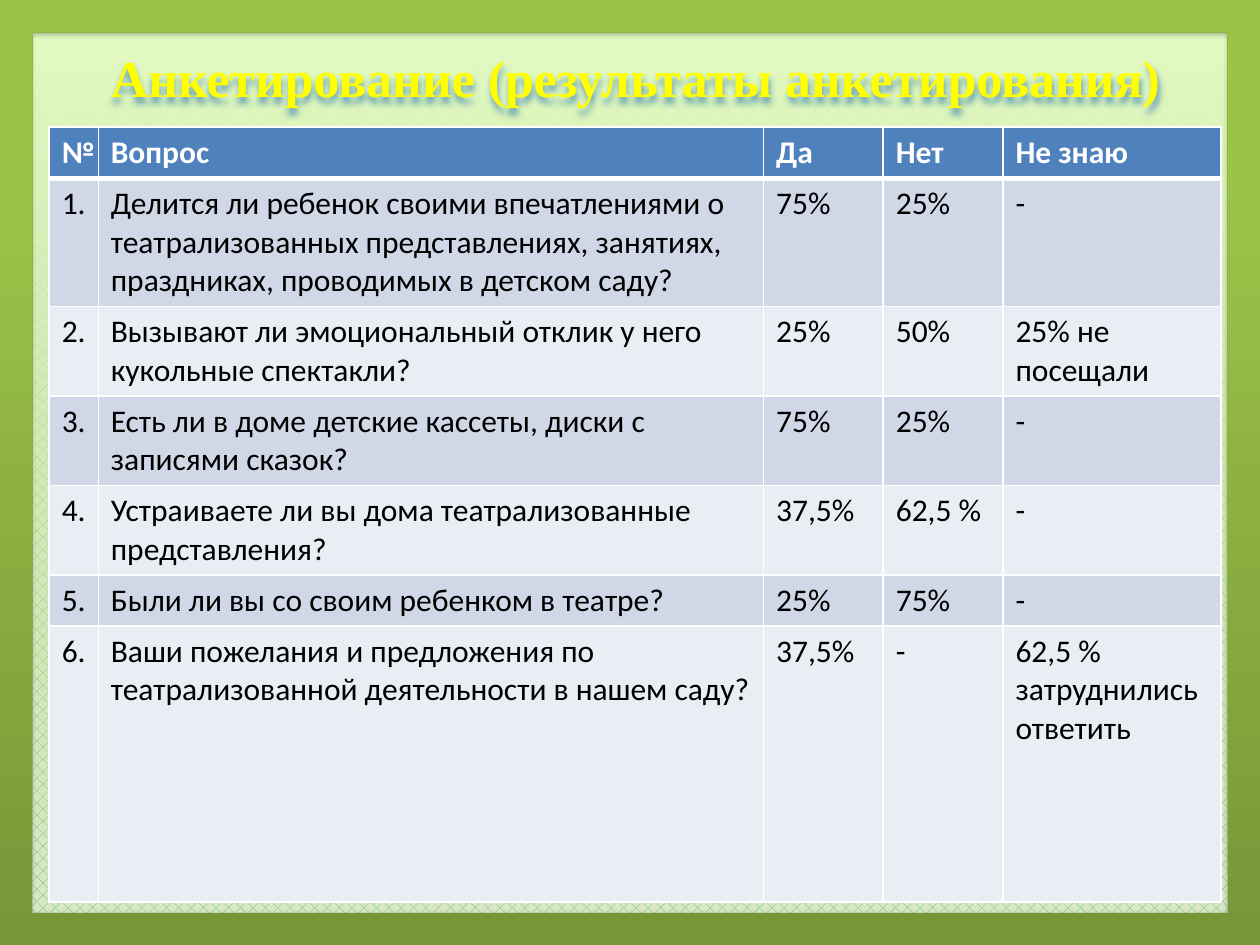
from dataclasses import dataclass

from lxml import etree
from pptx import Presentation
from pptx.dml.color import RGBColor
from pptx.enum.dml import MSO_PATTERN
from pptx.enum.shapes import MSO_SHAPE
from pptx.enum.text import MSO_ANCHOR, PP_ALIGN
from pptx.oxml.ns import qn
from pptx.util import Inches, Pt

RECTANGLE, FRAME = MSO_SHAPE.RECTANGLE, MSO_SHAPE.FRAME
LEFT, TOP = PP_ALIGN.LEFT, MSO_ANCHOR.TOP
DOTS = MSO_PATTERN.PERCENT_30
TITLE_ONLY = 5
GRID_COLUMNS, GRID_ROWS = 100, 75


@dataclass(frozen=True)
class Theme:
    title_font: str = "Times New Roman"
    body_font: str = "Calibri"
    title_size: float = 29.6
    body_size: float = 18
    title: str = "FFFF00"
    title_shadow: str = "1F6FA8"
    white: str = "FFFFFF"
    black: str = "000000"
    pattern: str = "00B050"
    panel_line: str = "98B955"
    panel: tuple = ((0, "DAFDA7", 37), (1, "E4FCC2", 100))
    frame: tuple = ((0, "779737", 100), (0.8, "9BC348", 100))
    header: str = "4F81BD"
    bands: tuple = ("D0D8E8", "E9EDF4")


def rgb(value):
    return RGBColor.from_string(value)


def add_color(parent, value, alpha=100):
    color = etree.SubElement(parent, qn("a:srgbClr"), val=value)
    if alpha < 100:
        etree.SubElement(color, qn("a:alpha"), val=str(alpha * 1000))


class SlideBuilder:
    """Places styled elements on a slide, measured in grid columns and rows."""

    def __init__(self, presentation, theme):
        self.theme = theme
        self.column = presentation.slide_width / GRID_COLUMNS
        self.row = presentation.slide_height / GRID_ROWS
        self.slide = presentation.slides.add_slide(presentation.slide_layouts[TITLE_ONLY])

    def box(self, left, top, width, height):
        return (round(left * self.column), round(top * self.row),
                round(width * self.column), round(height * self.row))

    def background(self):
        fill = self.slide.background.fill
        fill.patterned()
        fill.pattern = DOTS
        fill.fore_color.rgb = rgb(self.theme.pattern)
        fill.back_color.rgb = rgb(self.theme.white)

    def shadow(self, shape, color, alpha, blur, distance):
        shape.shadow.inherit = False
        effects = shape.element.spPr.find(qn("a:effectLst"))
        outer = etree.SubElement(effects, qn("a:outerShdw"), blurRad=str(Pt(blur)),
                                 dist=str(Pt(distance)), dir="5400000", rotWithShape="0")
        add_color(outer, color, alpha)

    def gradient_shape(self, kind, place, stops, line=None):
        shape = self.slide.shapes.add_shape(kind, *self.box(*place))
        shape.fill.gradient()
        shape.fill.gradient_angle = 90
        stop_list = shape.element.spPr.find(qn("a:gradFill")).find(qn("a:gsLst"))
        for stop in list(stop_list):
            stop_list.remove(stop)
        for position, color, alpha in stops:
            stop = etree.SubElement(stop_list, qn("a:gs"), pos=str(round(position * 100000)))
            add_color(stop, color, alpha)
        if line:
            shape.line.color.rgb = rgb(line)
            shape.line.width = Pt(0.75)
        else:
            shape.line.fill.background()
        self.shadow(shape, self.theme.black, 36, 3.1, 1.7)
        return shape

    def text_run(self, paragraph, text, font, size, color, bold):
        run = paragraph.add_run()
        run.text = text
        run.font.name = font
        run.font.size = Pt(size)
        run.font.bold = bold
        run.font.color.rgb = rgb(color)

    def title(self, text, place):
        title = self.slide.shapes.title
        title.left, title.top, title.width, title.height = self.box(*place)
        frame = title.text_frame
        frame.word_wrap = True
        frame.vertical_anchor = TOP
        paragraph = frame.paragraphs[0]
        paragraph.alignment = LEFT
        self.text_run(paragraph, text, self.theme.title_font, self.theme.title_size,
                      self.theme.title, True)
        self.shadow(title, self.theme.title_shadow, 60, 4, 3)
        # Bring the title in front of the panel
        self.slide.shapes.element.append(title.element)

    def cell(self, cell, text, fill, color, bold, bottom):
        cell.fill.solid()
        cell.fill.fore_color.rgb = rgb(fill)
        self.text_run(cell.text_frame.paragraphs[0], text, self.theme.body_font,
                      self.theme.body_size, color, bold)
        properties = cell._tc.get_or_add_tcPr()
        widths = {"a:lnL": 1, "a:lnR": 1, "a:lnT": 1, "a:lnB": bottom}
        for index, (side, width) in enumerate(widths.items()):
            border = etree.Element(qn(side), w=str(Pt(width)))
            add_color(etree.SubElement(border, qn("a:solidFill")), self.theme.white)
            properties.insert(index, border)

    def table(self, records, left, top, widths, heights):
        place = self.box(left, top, sum(widths), sum(heights))
        table = self.slide.shapes.add_table(len(records), len(widths), *place).table
        for column, width in zip(table.columns, widths):
            column.width = round(width * self.column)
        for row, height in zip(table.rows, heights):
            row.height = round(height * self.row)
        for index, record in enumerate(records):
            if index == 0:
                style = (self.theme.header, self.theme.white, True, 3)
            else:
                style = (self.theme.bands[(index - 1) % 2], self.theme.black, False, 1)
            for cell, text in zip(table.rows[index].cells, record):
                self.cell(cell, text, *style)


HEADER = ("№", "Вопрос", "Да", "Нет", "Не знаю")
ANSWERS = (
    ("Делится ли ребенок своими впечатлениями о театрализованных представлениях, "
     "занятиях, праздниках, проводимых в детском саду?", "75%", "25%", "-"),
    ("Вызывают ли эмоциональный отклик у него кукольные спектакли?",
     "25%", "50%", "25% не посещали"),
    ("Есть ли в доме детские кассеты, диски с записями сказок?", "75%", "25%", "-"),
    ("Устраиваете ли вы дома театрализованные представления?", "37,5%", "62,5 %", "-"),
    ("Были ли вы со своим ребенком в театре?", "25%", "75%", "-"),
    ("Ваши пожелания и предложения по театрализованной деятельности в нашем саду?",
     "37,5%", "-", "62,5 % затруднились ответить"),
)


def main():
    presentation = Presentation()
    presentation.slide_width, presentation.slide_height = Inches(10), Inches(7.5)
    theme = Theme()
    builder = SlideBuilder(presentation, theme)

    # Backdrop: pattern, pale panel and green frame
    builder.background()
    builder.gradient_shape(RECTANGLE, (2, 2.1, 96.9, 70.9), theme.panel, theme.panel_line)
    frame = builder.gradient_shape(FRAME, (0, 0, GRID_COLUMNS, GRID_ROWS), theme.frame)
    frame.adjustments[0] = 0.034

    # Title and survey results
    builder.title("Анкетирование (результаты анкетирования)", (7.8, 3.1, 87.2, 7.8))
    records = [HEADER] + [(f"{number}.", *answer) for number, answer in enumerate(ANSWERS, 1)]
    builder.table(records, 3.9, 10.1, widths=(3.9, 52.8, 9.5, 9.5, 17.3),
                  heights=(4, 10, 7, 7, 7, 4, 21.9))

    presentation.save("out.pptx")


if __name__ == "__main__":
    main()
